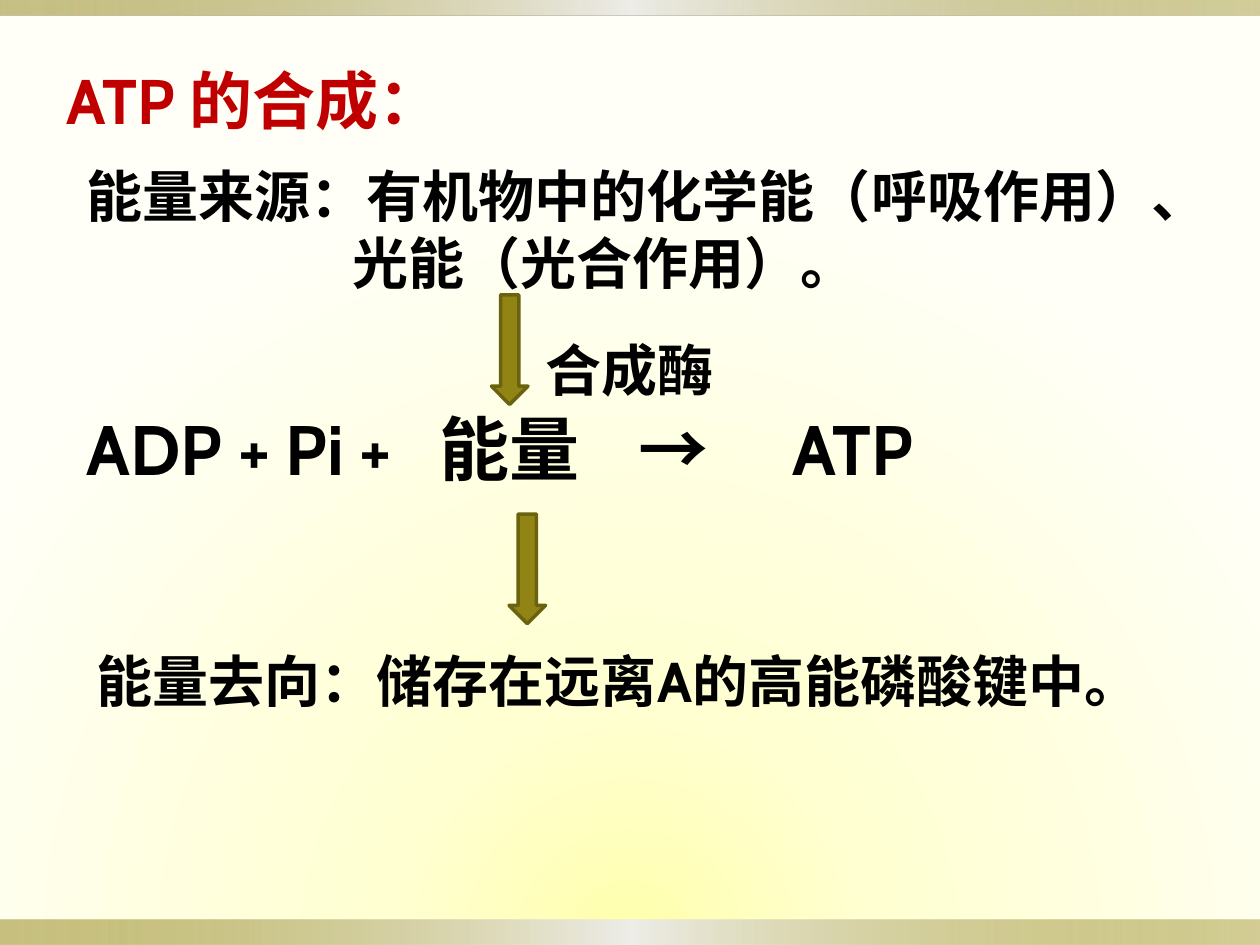
from lxml.etree import SubElement
from pptx import Presentation
from pptx.dml.color import RGBColor
from pptx.enum.shapes import MSO_SHAPE as Shape
from pptx.enum.text import MSO_ANCHOR as Anchor, PP_ALIGN as Align
from pptx.oxml import parse_xml
from pptx.oxml.ns import nsdecls, qn
from pptx.util import Inches, Pt

RED = RGBColor(0xC0, 0x00, 0x00)
BLACK = RGBColor(0x00, 0x00, 0x00)
OLIVE = RGBColor(0x91, 0x84, 0x15)
DARK_OLIVE = RGBColor(0x6B, 0x62, 0x10)
SILVER = RGBColor(0xEE, 0xED, 0xE8)
YELLOW = RGBColor(0xFF, 0xFF, 0xAC)
PALE_YELLOW = RGBColor(0xFF, 0xFF, 0xD2)
IVORY = RGBColor(0xFF, 0xFF, 0xF7)


def set_gradient(fill, element, stops, direction):
    """Fill with (position %, colour, opacity %) stops."""
    fill.solid()
    stop_xml = "".join(
        f'<a:gs pos="{position * 1000}"><a:srgbClr val="{color}">'
        f'<a:alpha val="{opacity * 1000}"/></a:srgbClr></a:gs>'
        for position, color, opacity in stops)
    gradient = parse_xml(f'<a:gradFill {nsdecls("a")} rotWithShape="1">'
                         f'<a:gsLst>{stop_xml}</a:gsLst>{direction}</a:gradFill>')
    solid = next(element.iter(qn("a:solidFill")))
    solid.getparent().replace(solid, gradient)


def write_lines(shape, lines, color=BLACK, wrap=True):
    """Write (text, size, indent in inches) lines as bold paragraphs."""
    frame = shape.text_frame
    frame.word_wrap = wrap
    frame.vertical_anchor = Anchor.TOP
    for index, (text, size, indent) in enumerate(lines):
        paragraph = frame.add_paragraph() if index else frame.paragraphs[0]
        paragraph.text = text
        paragraph.alignment = Align.LEFT
        paragraph.font.name = "Cabin"
        paragraph.font.size = Pt(size)
        paragraph.font.bold = True
        paragraph.font.color.rgb = color
        if indent:
            paragraph._p.get_or_add_pPr().set("marL", str(Inches(indent)))
    return frame


presentation = Presentation()
presentation.slide_width = Inches(10)
presentation.slide_height = Inches(7.5)
slide = presentation.slides.add_slide(presentation.slide_layouts[5])
shapes = slide.shapes

# Background glow
set_gradient(slide.background.fill, slide.element,
             [(0, YELLOW, 100), (31, PALE_YELLOW, 100), (100, IVORY, 100)],
             '<a:path path="circle"><a:fillToRect l="50000" t="150000" '
             'r="50000" b="0"/></a:path>')

# Bars at the bottom and top edges
for top, height in ((7.3, 0.2), (0, 0.12)):
    bar = shapes.add_shape(Shape.RECTANGLE, 0, Inches(top), Inches(10), Inches(height))
    bar.shadow.inherit = False
    set_gradient(bar.fill, bar._element,
                 [(0, OLIVE, 50), (50, SILVER, 100), (100, OLIVE, 40)],
                 '<a:lin ang="0" scaled="0"/>')
    bar.line.fill.background()

# Title
title = shapes.title
title.left, title.top = Inches(0.43), Inches(0.44)
title.width, title.height = Inches(3.12), Inches(0.71)
write_lines(title, [("ATP 的合成：", 36, 0)], RED, wrap=False)

# Enzyme and reaction, with the terms on tab stops
reaction = shapes.add_textbox(Inches(0.59), Inches(2.5), Inches(7.78), Inches(1.45))
frame = write_lines(reaction, [("合成酶", 32, 3.64),
                               ("ADP + Pi +\t能量\t→\tATP", 40, 0)])
frame.margin_top = Inches(0.16)
equation = frame.paragraphs[1]
equation.space_before = Pt(2)
tab_list = SubElement(equation._p.get_or_add_pPr(), qn("a:tabLst"))
for position in (2.8, 4.38, 5.6):
    SubElement(tab_list, qn("a:tab"), pos=str(Inches(position)), algn="l")
properties = equation._p.pPr
properties.append(properties.find(qn("a:defRPr")))  # must follow the tab list

# Energy source
source = shapes.add_textbox(Inches(0.59), Inches(1.23), Inches(9.53), Inches(1.72))
write_lines(source, [("能量来源：有机物中的化学能（呼吸作用）、", 32, 0),
                     ("光能（光合作用）。", 32, 2.11)])

# Energy destination
destination = shapes.add_textbox(Inches(0.67), Inches(5.08), Inches(8.55), Inches(0.64))
write_lines(destination, [("能量去向：储存在远离A的高能磷酸键中。", 32, 0)], wrap=False)

# Arrows into and out of the energy term
for left, top in ((3.9, 2.34), (4.04, 4.08)):
    arrow = shapes.add_shape(Shape.DOWN_ARROW, Inches(left), Inches(top),
                             Inches(0.29), Inches(0.87))
    arrow.shadow.inherit = False
    arrow.fill.solid()
    arrow.fill.fore_color.rgb = OLIVE
    arrow.line.color.rgb = DARK_OLIVE
    arrow.line.width = Pt(2)

presentation.save("out.pptx")
